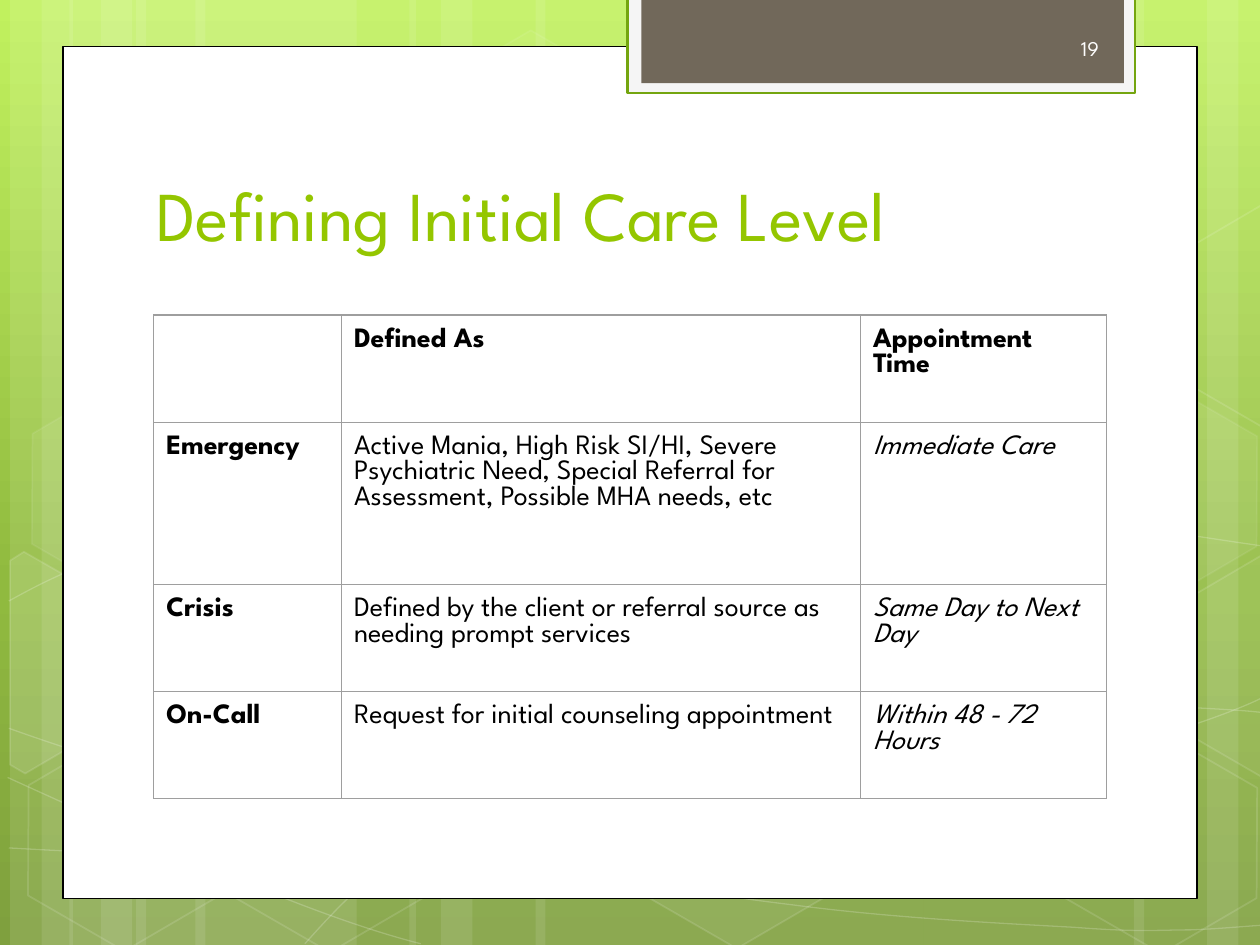
"""Build the slide "Defining Initial Care Level" on a ten-column grid."""
from copy import deepcopy
from dataclasses import dataclass

from lxml.etree import SubElement
from pptx import Presentation
from pptx.dml.color import RGBColor
from pptx.enum.shapes import MSO_SHAPE
from pptx.enum.text import MSO_ANCHOR, MSO_AUTO_SIZE, PP_ALIGN
from pptx.oxml.ns import qn
from pptx.util import Inches, Pt

WIDTH, HEIGHT = Inches(10), Inches(7.5)
COL, ROW = WIDTH / 10, HEIGHT / 7.5
FONT = "League Spartan"
WHITE, BLACK, GREEN = "FFFFFF", "000000", "94C600"


@dataclass
class Box:
    x: float
    y: float
    w: float
    h: float

    def emu(self) -> list[int]:
        return [*at(self.x, self.y), *at(self.w, self.h)]


@dataclass
class Look:
    fill: str | None = None
    fill_alpha: int = 100
    line: str | None = None
    width: float = 1
    line_alpha: int = 100


@dataclass
class Hexagon:
    x: float
    y: float
    fill_alpha: int
    line_alpha: int


@dataclass
class Outline:
    points: list[tuple[float, float]]
    fill_alpha: int = 0


STRIPES = [(1.08, 1.75), (0.08, 0.5), (0.33, 0.83), (1.55, 1.75), (0.55, 0.5), (0.8, 0.83),
           (7.33, 1.75), (9.58, 0.5), (9, 0.83), (4.25, 3.08), (3.25, 0.5), (3.5, 0.83)]
CURVES = [
    [(0.07, 6.73), (0.61, 6.76), (1.15, 6.79), (1.9, 6.78), (2.65, 6.77), (3.58, 6.75),
     (4.58, 6.65), (5.58, 6.55), (7, 6.36), (7.92, 6.17), (8.83, 5.98), (9.77, 5.68),
     (10.07, 5.51)],
    [(0.07, 4.77), (0.36, 4.61), (0.65, 4.46), (1.21, 4.31), (1.78, 4.16), (2.59, 3.94),
     (3.47, 3.87), (4.36, 3.8), (5.44, 3.79), (6.54, 3.87), (7.64, 3.95), (9.47, 4.26),
     (10.07, 4.34)],
    [(0.06, 6.17), (1.27, 6.72), (2.47, 7.27), (3.34, 7.49)],
    [(0.07, 5.78), (0.38, 5.89), (0.7, 6), (1.28, 6.16), (1.86, 6.31), (2.73, 6.56),
     (3.57, 6.73), (4.4, 6.9), (5.45, 7.08), (6.28, 7.18), (7.11, 7.29), (8, 7.33),
     (8.53, 7.36), (9.05, 7.4), (9.19, 7.38), (9.45, 7.38), (9.71, 7.37), (9.89, 7.35),
     (10.07, 7.34)],
    [(2.42, 7.49), (2.6, 7.29), (2.78, 7.09), (3.02, 6.91), (3.26, 6.73), (3.6, 6.53),
     (3.88, 6.39), (4.16, 6.25), (4.33, 6.19), (4.7, 6.09), (5.06, 5.99), (5.73, 5.85),
     (6.08, 5.78), (6.44, 5.71), (6.49, 5.71), (6.8, 5.69), (7.11, 5.66), (7.6, 5.63),
     (7.94, 5.62), (8.29, 5.61), (8.86, 5.62), (8.86, 5.62), (8.86, 5.62), (9.53, 5.62),
     (9.53, 5.62), (9.71, 5.63), (9.88, 5.64), (9.97, 5.65), (10.06, 5.66), (10.03, 5.65),
     (10.06, 5.66)],
]
HEXAGONS = [Hexagon(3.34, 0.36, 4, 8), Hexagon(4.97, 5.89, 6, 12), Hexagon(0.11, 5.91, 0, 12),
            Hexagon(0.14, 3.12, 7, 8), Hexagon(1.74, 5.92, 0, 12), Hexagon(8.34, 5.93, 0, 12),
            Hexagon(8.34, 3.14, 7, 8)]
CUT_HEXAGONS = [
    Outline([(0.08, 4.45), (0.19, 4.38), (0.96, 4.82), (0.95, 5.7), (0.2, 6.14),
             (0.08, 6.07)], 10),
    Outline([(9.26, 4.85), (10.01, 4.41), (10.09, 4.46), (10.09, 6.13), (10.02, 6.17),
             (9.26, 5.73)], 4),
    Outline([(9.26, 2.07), (10.01, 1.63), (10.1, 1.68), (10.09, 3.35), (10.02, 3.39),
             (9.26, 2.95)]),
]
CARE_LEVELS = [
    ("", "Defined As", "Appointment\nTime"),
    ("Emergency", "Active Mania, High Risk SI/HI, Severe Psychiatric Need, Special Referral "
     "for Assessment, Possible MHA needs, etc", "Immediate Care"),
    ("Crisis", "Defined by the client or referral source as needing prompt services",
     "Same Day to Next Day"),
    ("On-Call", "Request for initial counseling appointment", "Within 48 - 72 Hours"),
]


def at(x: float, y: float) -> tuple[int, int]:
    return round(x * COL), round(y * ROW)


def rgb(color: str) -> RGBColor:
    return RGBColor.from_string(color)


def set_alpha(parent, share: int) -> None:
    if share < 100:
        SubElement(parent.find(qn("a:solidFill"))[0], qn("a:alpha")).set("val", str(share * 1000))


def style(sp, look: Look) -> None:
    sp.shadow.inherit = False
    spPr = sp._element.spPr
    if look.fill and look.fill_alpha:
        sp.fill.solid()
        sp.fill.fore_color.rgb = rgb(look.fill)
        set_alpha(spPr, look.fill_alpha)
    else:
        sp.fill.background()
    if look.line:
        sp.line.color.rgb = rgb(look.line)
        sp.line.width = Pt(look.width)
        set_alpha(spPr.find(qn("a:ln")), look.line_alpha)
    else:
        sp.line.fill.background()


def add_shape(s, kind: MSO_SHAPE, box: Box, look: Look):
    sp = s.shapes.add_shape(kind, *box.emu())
    style(sp, look)
    return sp


def add_outline(s, points: list, look: Look, close: bool = True):
    pts = [at(*pt) for pt in points]
    builder = s.shapes.build_freeform(*pts[0])
    builder.add_line_segments(pts[1:], close=close)
    sp = builder.convert_to_shape()
    style(sp, look)
    return sp


def add_curve(s, points: list, look: Look) -> None:
    sp = add_outline(s, points, look, close=False)
    segments = list(sp._element.iter(qn("a:lnTo")))
    outline = segments[0].getparent()
    for i in range(0, len(segments), 3):
        cubic = SubElement(outline, qn("a:cubicBezTo"))
        for segment in segments[i:i + 3]:
            cubic.append(segment[0])
            outline.remove(segment)


def write(tf, text: str, *, size: float, color: str = BLACK, bold: bool = False,
          italic: bool = False, align: PP_ALIGN = PP_ALIGN.LEFT) -> None:
    for i, line in enumerate(text.split("\n")):
        p = tf.add_paragraph() if i else tf.paragraphs[0]
        p.alignment = align
        r = p.add_run()
        r.text = line
        f = r.font
        f.name, f.size, f.bold, f.italic = FONT, Pt(size), bold, italic
        f.color.rgb = rgb(color)


def add_background(s) -> None:
    fill = s.background.fill
    fill.gradient()
    fill.gradient_angle = 270
    stops = s._element.find(".//" + qn("a:gsLst"))
    stops.append(deepcopy(stops[0]))
    for stop, (pos, color) in zip(fill.gradient_stops,
                                  [(0, "C1F15E"), (0.62, "90BA3F"), (1, "7FA03E")]):
        stop.position, stop.color.rgb = pos, rgb(color)


def add_decor(s) -> None:
    for x, w in STRIPES:
        add_shape(s, MSO_SHAPE.RECTANGLE, Box(x, 0, w, 7.5), Look(WHITE, 10))
    for curve in CURVES:
        add_curve(s, curve, Look(line=WHITE, width=0.75, line_alpha=20))
    for h in HEXAGONS:
        sp = add_shape(s, MSO_SHAPE.HEXAGON, Box(h.x, h.y, 1.75, 1.52),
                       Look(WHITE, h.fill_alpha, WHITE, 1, h.line_alpha))
        sp.rotation, sp.adjustments[0] = 30, 0.285
    for cut in CUT_HEXAGONS:
        add_outline(s, cut.points, Look(WHITE, cut.fill_alpha, WHITE, 1, 12))
    for box, look in [(Box(0.5, 0.37, 9, 6.76), Look(WHITE, line=BLACK, width=0.75)),
                      (Box(4.98, -0.02, 4.03, 0.76), Look("F5F5F5", line="74A50F", width=1.25)),
                      (Box(5.09, -0.02, 3.83, 0.68), Look("71685A"))]:
        add_shape(s, MSO_SHAPE.RECTANGLE, box, look)


def add_border(cell, color: str, width: float) -> None:
    tcPr = cell._tc.get_or_add_tcPr()
    for i, side in enumerate(("lnL", "lnR", "lnT", "lnB")):
        ln = tcPr.makeelement(qn(f"a:{side}"), {"w": str(Pt(width))})
        SubElement(SubElement(ln, qn("a:solidFill")), qn("a:srgbClr")).set("val", color)
        tcPr.insert(i, ln)


def add_care_table(s) -> None:
    cols, rows = [1.49, 4.12, 1.95], [0.85, 1.29, 0.85, 0.85]
    box = Box(1.22, 2.5, sum(cols), sum(rows))
    table = s.shapes.add_table(len(rows), len(cols), *box.emu()).table
    table.first_row = table.horz_banding = False
    for col, w in zip(table.columns, cols):
        col.width = round(w * COL)
    for i, (row, h, texts) in enumerate(zip(table.rows, rows, CARE_LEVELS)):
        row.height = round(h * ROW)
        for j, (cell, text) in enumerate(zip(row.cells, texts)):
            cell.fill.background()
            cell.margin_left = cell.margin_right = cell.margin_top = cell.margin_bottom = Inches(0.1)
            add_border(cell, "9E9E9E", 0.75)
            if text:
                write(cell.text_frame, text, size=16, bold=i == 0 or j == 0,
                      italic=i > 0 and j == 2)


def main() -> None:
    prs = Presentation()
    prs.slide_width, prs.slide_height = WIDTH, HEIGHT
    s = prs.slides.add_slide(prs.slide_layouts[5])
    add_background(s)
    add_decor(s)
    title = s.shapes.title
    title.left, title.top, title.width, title.height = Box(1.14, 0.99, 7.68, 1.09).emu()
    s.shapes._spTree.append(title._element)
    number = s.shapes.add_textbox(*Box(7.36, 0.18, 1.46, 0.4).emu())
    for sp, anchor in ((title, MSO_ANCHOR.BOTTOM), (number, MSO_ANCHOR.MIDDLE)):
        tf = sp.text_frame
        tf.word_wrap, tf.auto_size, tf.vertical_anchor = True, MSO_AUTO_SIZE.NONE, anchor
    write(title.text_frame, "Defining Initial Care Level", size=40, color=GREEN)
    write(number.text_frame, "19", size=12, color="FEFEFE", align=PP_ALIGN.RIGHT)
    add_care_table(s)
    prs.save("out.pptx")


if __name__ == "__main__":
    main()
